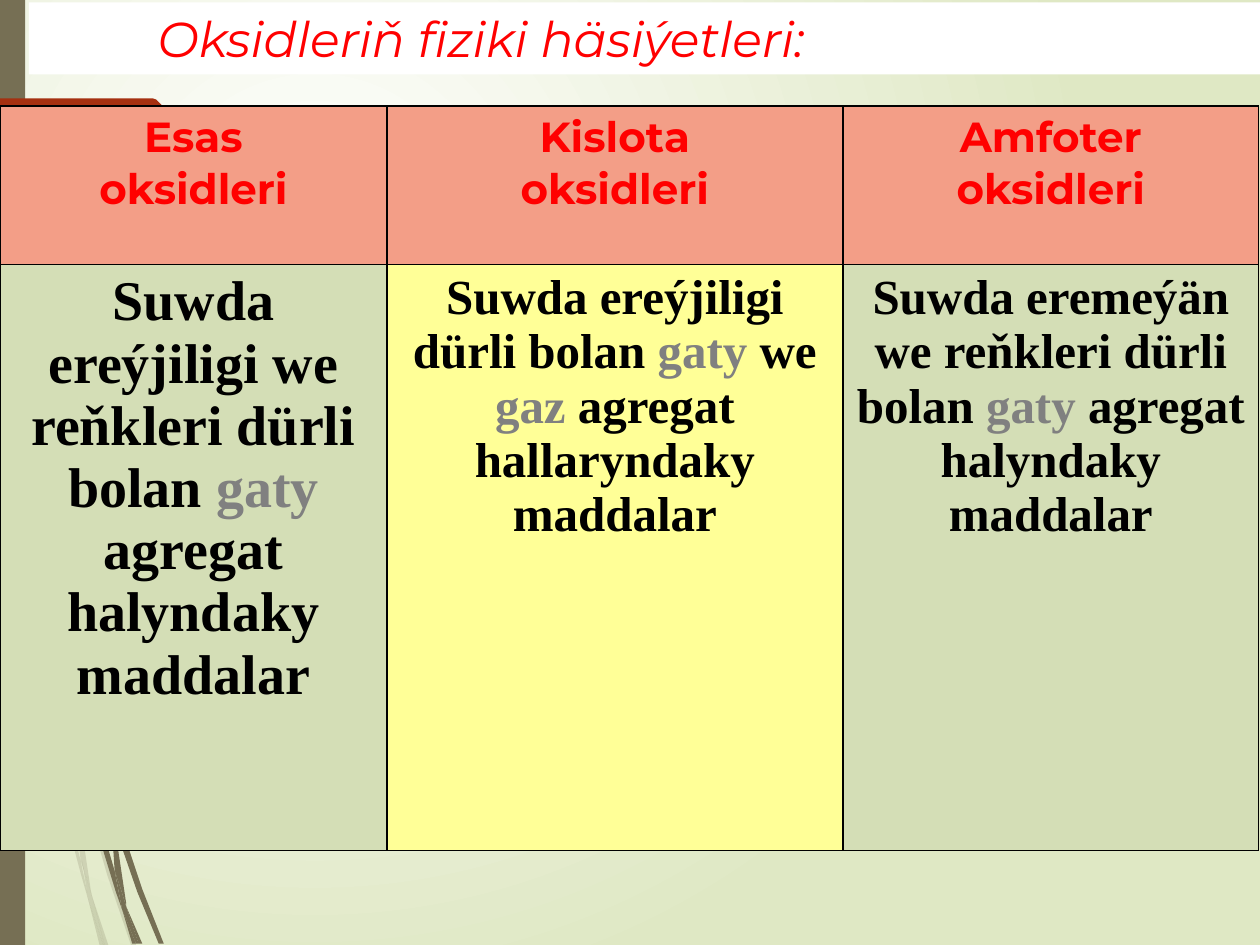
from lxml import etree
from pptx import Presentation
from pptx.dml.color import RGBColor
from pptx.enum.shapes import MSO_SHAPE
from pptx.enum.text import MSO_ANCHOR, PP_ALIGN
from pptx.oxml import parse_xml
from pptx.oxml.ns import nsdecls, qn
from pptx.util import Inches, Pt

BROWN = RGBColor(0x76, 0x6F, 0x54)
RUST = RGBColor(0xA5, 0x30, 0x10)
WHITE = RGBColor(0xFF, 0xFF, 0xFF)
BLACK = RGBColor(0x00, 0x00, 0x00)
RED = RGBColor(0xFF, 0x00, 0x00)
GRAY = RGBColor(0x80, 0x80, 0x80)
SALMON = RGBColor(0xF3, 0x9E, 0x87)
SAGE = RGBColor(0xD4, 0xDE, 0xB6)
YELLOW = RGBColor(0xFF, 0xFF, 0x97)
PALE_GREEN = RGBColor(0xDF, 0xE8, 0xC4)

HEADING_FONT = "Montserrat"
BODY_FONT = "Times New Roman"

# Blades of grass that reach below the table, as outlines in inches
LIGHT_BLADES = [
    [(0.64, 6.07), (0.61, 5.96), (0.61, 6.1), (0.85, 6.94), (1.04, 7.5),
     (1.08, 7.5), (0.88, 6.92)],
    [(0.83, 7.5), (0.86, 7.5), (0.73, 7.11)],
    [(0.64, 6.83), (0.48, 6.19), (0.22, 4.69), (0.12, 3.76), (0.08, 3.5),
     (0.19, 4.7), (0.45, 6.21), (0.64, 6.93), (0.7, 7.14), (0.69, 7.07)],
    [(0.58, 5.99), (0.6, 6.46), (0.64, 6.83), (0.67, 6.92), (0.73, 7.11),
     (0.72, 7.06), (0.63, 6.46), (0.61, 6.1), (0.61, 6.08)],
    [(0.7, 7.14), (0.79, 7.5), (0.82, 7.5)],
    [(0.67, 6.92), (0.65, 6.83), (0.69, 7.07), (0.7, 7.14), (0.82, 7.5),
     (0.83, 7.5), (0.73, 7.11)],
]
DARK_BLADES = [
    [(0.94, 6.49), (0.91, 6.41), (0.91, 6.56), (1.09, 7.08), (1.26, 7.49),
     (1.3, 7.49), (1.13, 7.06)],
    [(0.91, 6.91), (0.81, 6.57), (0.6, 5.56), (0.53, 5.05), (0.47, 4.77),
     (0.56, 5.57), (0.77, 6.59), (0.92, 7.08), (0.97, 7.22), (0.96, 7.17)],
    [(1.1, 7.49), (1.13, 7.49), (1, 7.19)],
    [(0.97, 7.22), (1.05, 7.49), (1.08, 7.49)],
    [(0.88, 6.45), (0.91, 6.91), (0.96, 7.06), (1, 7.19), (1, 7.16),
     (0.91, 6.56), (0.9, 6.51)],
    [(0.96, 7.06), (0.91, 6.91), (0.96, 7.17), (0.97, 7.22), (1.08, 7.49),
     (1.1, 7.49), (1, 7.19)],
]
TAB_OUTLINE = [(0, 0.78), (1.21, 0.78), (1.24, 0.79), (1.49, 1.04),
               (1.49, 1.07), (1.24, 1.32), (1.21, 1.33), (0, 1.33)]

COLUMN_WIDTHS = [3.07, 3.62, 3.3]
ROW_HEIGHTS = [1.26, 4.65]
HEADERS = [["Esas", "oksidleri"], ["Kislota", "oksidleri"], ["Amfoter", "oksidleri"]]
# Each body cell: fill, text size, runs with their colours
BODIES = [
    (SAGE, 32, [("Suwda ereýjiligi we reňkleri dürli bolan ", BLACK),
                ("gaty ", GRAY), ("agregat halyndaky maddalar", BLACK)]),
    (YELLOW, 28, [("Suwda ereýjiligi dürli bolan ", BLACK), ("gaty", GRAY),
                  (" we ", BLACK), ("gaz ", GRAY),
                  ("agregat hallaryndaky maddalar", BLACK)]),
    (SAGE, 28, [("Suwda eremeýän we reňkleri dürli bolan ", BLACK),
                ("gaty ", GRAY), ("agregat halyndaky maddalar", BLACK)]),
]


def set_background(slide):
    slide.background.fill.gradient()
    gradient = slide.element.find(".//" + qn("a:gradFill"))
    gradient.getparent().replace(gradient, parse_xml(
        f'<a:gradFill {nsdecls("a")} rotWithShape="1"><a:gsLst>'
        f'<a:gs pos="0"><a:srgbClr val="{WHITE}"/></a:gs>'
        f'<a:gs pos="100000"><a:srgbClr val="{PALE_GREEN}"/></a:gs></a:gsLst>'
        '<a:path path="circle"><a:fillToRect l="50000" t="50000" r="100000" b="100000"/>'
        '</a:path></a:gradFill>'))


def paint(shape, color):
    shape.shadow.inherit = False
    shape.fill.solid()
    shape.fill.fore_color.rgb = color
    shape.line.fill.background()


def add_outline(slide, points, color, opacity=100):
    corners = [(Inches(x), Inches(y)) for x, y in points]
    builder = slide.shapes.build_freeform(*corners[0])
    builder.add_line_segments(corners[1:], close=True)
    shape = builder.convert_to_shape()
    paint(shape, color)
    if opacity < 100:
        color_element = shape.element.spPr.find(".//" + qn("a:srgbClr"))
        etree.SubElement(color_element, qn("a:alpha"), val=str(opacity * 1000))


def add_rectangle(slide, left, top, width, height, color):
    shape = slide.shapes.add_shape(MSO_SHAPE.RECTANGLE, Inches(left), Inches(top),
                                   Inches(width), Inches(height))
    paint(shape, color)
    return shape


def add_run(paragraph, text, color, **formats):
    run = paragraph.add_run()
    run.text = text
    run.font.color.rgb = color
    for name, value in formats.items():
        setattr(run.font, name, value)


def add_title(slide, text):
    shape = add_rectangle(slide, 0.23, 0.02, 9.92, 0.57, WHITE)
    frame = shape.text_frame
    settings = {"word_wrap": True, "margin_left": Inches(1.02),
                "vertical_anchor": MSO_ANCHOR.TOP}
    for name, value in settings.items():
        setattr(frame, name, value)
    paragraph = frame.paragraphs[0]
    paragraph.alignment = PP_ALIGN.LEFT
    add_run(paragraph, text, RED, name=HEADING_FONT, size=Pt(28), italic=True)


def fill_cell(cell, color, paragraphs, **formats):
    cell.fill.solid()
    cell.fill.fore_color.rgb = color
    frame = cell.text_frame
    for index, runs in enumerate(paragraphs):
        paragraph = frame.add_paragraph() if index else frame.paragraphs[0]
        paragraph.alignment = PP_ALIGN.CENTER
        for text, text_color in runs:
            add_run(paragraph, text, text_color, bold=True, **formats)
    properties = cell._tc.get_or_add_tcPr()
    for index, side in enumerate(("lnL", "lnR", "lnT", "lnB")):
        properties.insert(index, parse_xml(
            f'<a:{side} {nsdecls("a")} w="12700"><a:solidFill>'
            f'<a:srgbClr val="{BLACK}"/></a:solidFill></a:{side}>'))


def add_oxide_table(slide):
    table = slide.shapes.add_table(
        len(ROW_HEIGHTS), len(COLUMN_WIDTHS), Inches(0), Inches(0.84),
        Inches(sum(COLUMN_WIDTHS)), Inches(sum(ROW_HEIGHTS))).table
    for column, width in zip(table.columns, COLUMN_WIDTHS):
        column.width = Inches(width)
    for row, height in zip(table.rows, ROW_HEIGHTS):
        row.height = Inches(height)
    for index, (lines, (color, size, runs)) in enumerate(zip(HEADERS, BODIES)):
        fill_cell(table.cell(0, index), SALMON, [[(line, RED)] for line in lines],
                  name=HEADING_FONT, size=Pt(24))
        fill_cell(table.cell(1, index), color, [runs], name=BODY_FONT, size=Pt(size))


def main():
    presentation = Presentation()
    presentation.slide_width = Inches(10)
    presentation.slide_height = Inches(7.5)
    slide = presentation.slides.add_slide(presentation.slide_layouts[6])

    # Backdrop: gradient, grass, side bar and tab
    set_background(slide)
    for blade in LIGHT_BLADES:
        add_outline(slide, blade, BROWN, opacity=20)
    for blade in DARK_BLADES:
        add_outline(slide, blade, BROWN)
    add_rectangle(slide, 0, 0, 0.2, 7.5, BROWN)
    add_outline(slide, TAB_OUTLINE, RUST)

    # Content
    add_title(slide, "Oksidleriň fiziki häsiýetleri:")
    add_oxide_table(slide)
    presentation.save("out.pptx")


if __name__ == "__main__":
    main()
